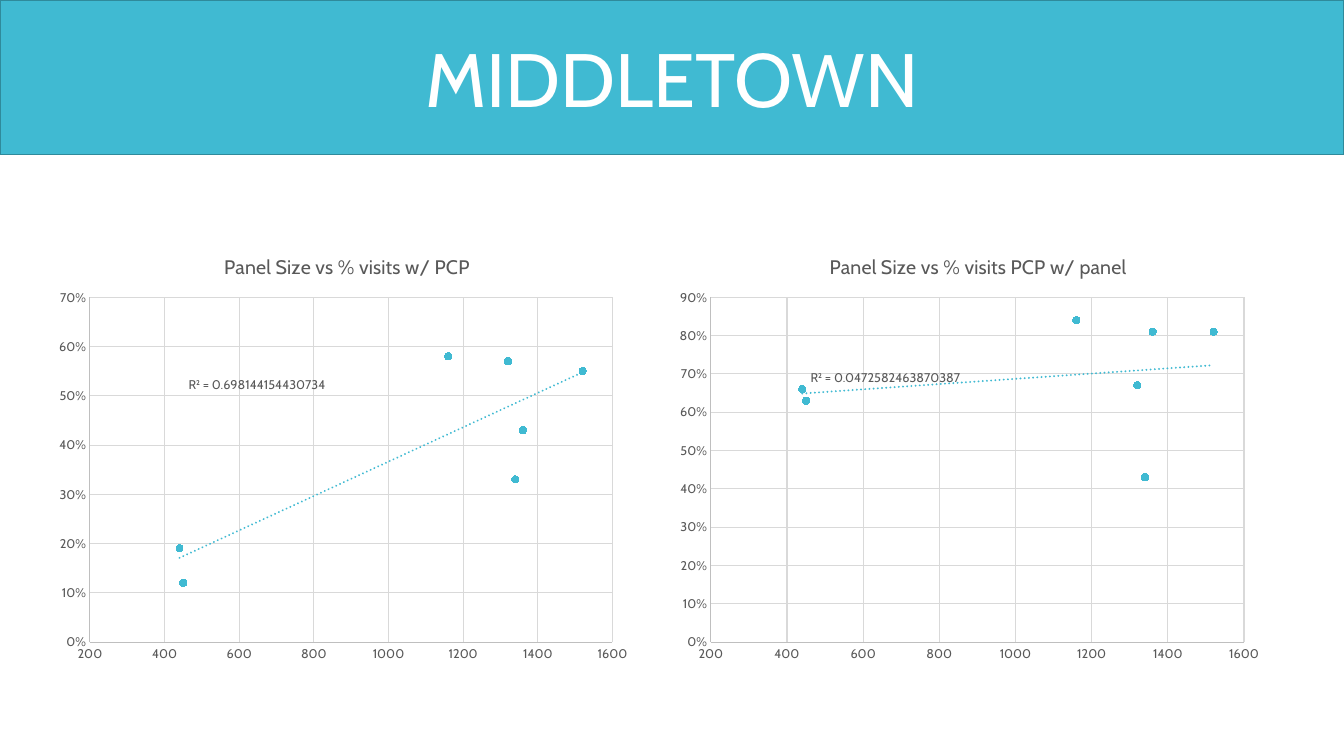
from lxml.etree import SubElement
from pptx import Presentation
from pptx.chart.data import XyChartData
from pptx.dml.color import RGBColor
from pptx.enum.chart import XL_CHART_TYPE as ChartType
from pptx.enum.chart import XL_MARKER_STYLE as Marker
from pptx.enum.chart import XL_TICK_MARK as Tick
from pptx.enum.shapes import MSO_SHAPE as Shape
from pptx.enum.text import MSO_ANCHOR as Anchor
from pptx.enum.text import PP_ALIGN as Align
from pptx.oxml import parse_xml
from pptx.oxml.ns import nsdecls, qn
from pptx.util import Inches, Pt

FONT = "Cabin"
COLORS = {"teal": "40BAD2", "edge": "2F8A9B", "white": "FFFFFF",
          "text": "595959", "axis": "BFBFBF", "grid": "D9D9D9"}
PANEL_SIZES = [1360, 1340, 1160, 1520, 1320, 450, 440]
CHARTS = [
    {"title": "Panel Size vs % visits w/ PCP", "title_x": 0.29,
     "left": 0.48, "width": 5.89, "top_value": 0.7,
     "shares": [0.43, 0.33, 0.58, 0.55, 0.57, 0.12, 0.19],
     "fit": "R² = 0.698144154430734", "fit_at": (1.87, 3.71)},
    {"title": "Panel Size vs % visits PCP w/ panel", "title_x": 0.26,
     "left": 6.63, "width": 6.01, "top_value": 0.9,
     "shares": [0.81, 0.43, 0.84, 0.81, 0.67, 0.63, 0.66],
     "fit": "R² = 0.0472582463870387", "fit_at": (8.04, 3.64)},
]


def rgb(name):
    return RGBColor.from_string(COLORS[name])


def style_font(font, size, color):
    for key, value in {"name": FONT, "size": Pt(size), "bold": False}.items():
        setattr(font, key, value)
    font.color.rgb = rgb(color)


def style_line(line, color, width):
    line.color.rgb = rgb(color)
    line.width = Pt(width)


def write(box, text, size, color, align):
    frame = box.text_frame
    frame.vertical_anchor = Anchor.MIDDLE
    para = frame.paragraphs[0]
    para.alignment = align
    span = para.add_run()
    span.text = text
    style_font(span.font, size, color)
    return frame


def add_banner(page, text):
    banner = page.shapes.add_shape(Shape.RECTANGLE, 0, 0, Inches(13.33), Inches(1.53))
    banner.shadow.inherit = False
    banner.fill.solid()
    banner.fill.fore_color.rgb = rgb("teal")
    style_line(banner.line, "edge", 0.85)
    write(banner, text, 54, "white", Align.CENTER)


def add_fit_label(page, text, left, top):
    box = page.shapes.add_textbox(Inches(left), Inches(top), Inches(1.8), Inches(0.2))
    frame = write(box, text, 9, "text", Align.LEFT)
    for side in ("left", "top", "right", "bottom"):
        setattr(frame, f"margin_{side}", 0)
    frame.word_wrap = True


def make_layout(**values):
    """Return a manual chart layout holding the given c: elements."""
    items = "".join(f'<c:{key} val="{value}"/>' for key, value in values.items())
    return parse_xml(f'<c:layout {nsdecls("c")}><c:manualLayout>{items}'
                     '</c:manualLayout></c:layout>')


def place(parent, layout, before):
    old = parent.find(qn("c:layout"))
    if old is not None:
        parent.remove(old)
    parent.find(qn(before)).addprevious(layout)


def style_axis(axis, low, high, step, number_format):
    settings = {"minimum_scale": low, "maximum_scale": high, "major_unit": step,
                "major_tick_mark": Tick.NONE, "minor_tick_mark": Tick.NONE,
                "has_major_gridlines": True}
    for key, value in settings.items():
        setattr(axis, key, value)
    style_line(axis.format.line, "axis", 0.75)
    style_line(axis.major_gridlines.format.line, "grid", 0.75)
    labels = axis.tick_labels
    labels.number_format = number_format
    labels.number_format_is_linked = False
    style_font(labels.font, 9, "text")


def add_trend(series):
    trend = parse_xml(
        f'<c:trendline {nsdecls("c", "a")}><c:spPr><a:ln w="{Pt(1.5)}" cap="rnd">'
        f'<a:solidFill><a:srgbClr val="{COLORS["teal"]}"/></a:solidFill>'
        '<a:prstDash val="sysDot"/></a:ln></c:spPr></c:trendline>')
    for tag, value in {"trendlineType": "linear", "dispRSqr": "0", "dispEq": "0"}.items():
        SubElement(trend, qn(f"c:{tag}")).set("val", value)
    series._element.find(qn("c:xVal")).addprevious(trend)


def add_scatter(page, info):
    data = XyChartData()
    points = data.add_series("Series 1")
    for size, share in zip(PANEL_SIZES, info["shares"]):
        points.add_data_point(size, share)
    chart = page.shapes.add_chart(
        ChartType.XY_SCATTER, Inches(info["left"]), Inches(2.3),
        Inches(info["width"]), Inches(4.33), data).chart
    style_font(chart.font, 10, "text")
    chart.has_legend = False

    chart.has_title = True
    span = chart.chart_title.text_frame.paragraphs[0].add_run()
    span.text = info["title"]
    style_font(span.font, 14, "text")
    place(chart.chart_title._element, make_layout(
        xMode="edge", yMode="edge", x=info["title_x"], y=0.04), "c:overlay")
    place(chart._chartSpace.chart.plotArea, make_layout(
        layoutTarget="inner", xMode="edge", yMode="edge",
        x=0.07, y=0.15, w=0.88, h=0.79), "c:scatterChart")

    style_axis(chart.category_axis, 200, 1600, 200, "General")
    style_axis(chart.value_axis, 0, info["top_value"], 0.1, "0%")
    plot = chart.plots[0]
    plot.vary_by_categories = False
    series = plot.series[0]
    series.format.line.fill.background()
    series.smooth = False
    marker = series.marker
    marker.style, marker.size = Marker.CIRCLE, 5
    marker.format.fill.solid()
    marker.format.fill.fore_color.rgb = rgb("teal")
    style_line(marker.format.line, "teal", 0.75)
    add_trend(series)


def main():
    deck = Presentation()
    deck.slide_width, deck.slide_height = Inches(13.33), Inches(7.5)
    page = deck.slides.add_slide(deck.slide_layouts[6])
    add_banner(page, "MIDDLETOWN")
    for info in CHARTS:
        add_scatter(page, info)
        add_fit_label(page, info["fit"], *info["fit_at"])
    deck.save("out.pptx")


if __name__ == "__main__":
    main()
